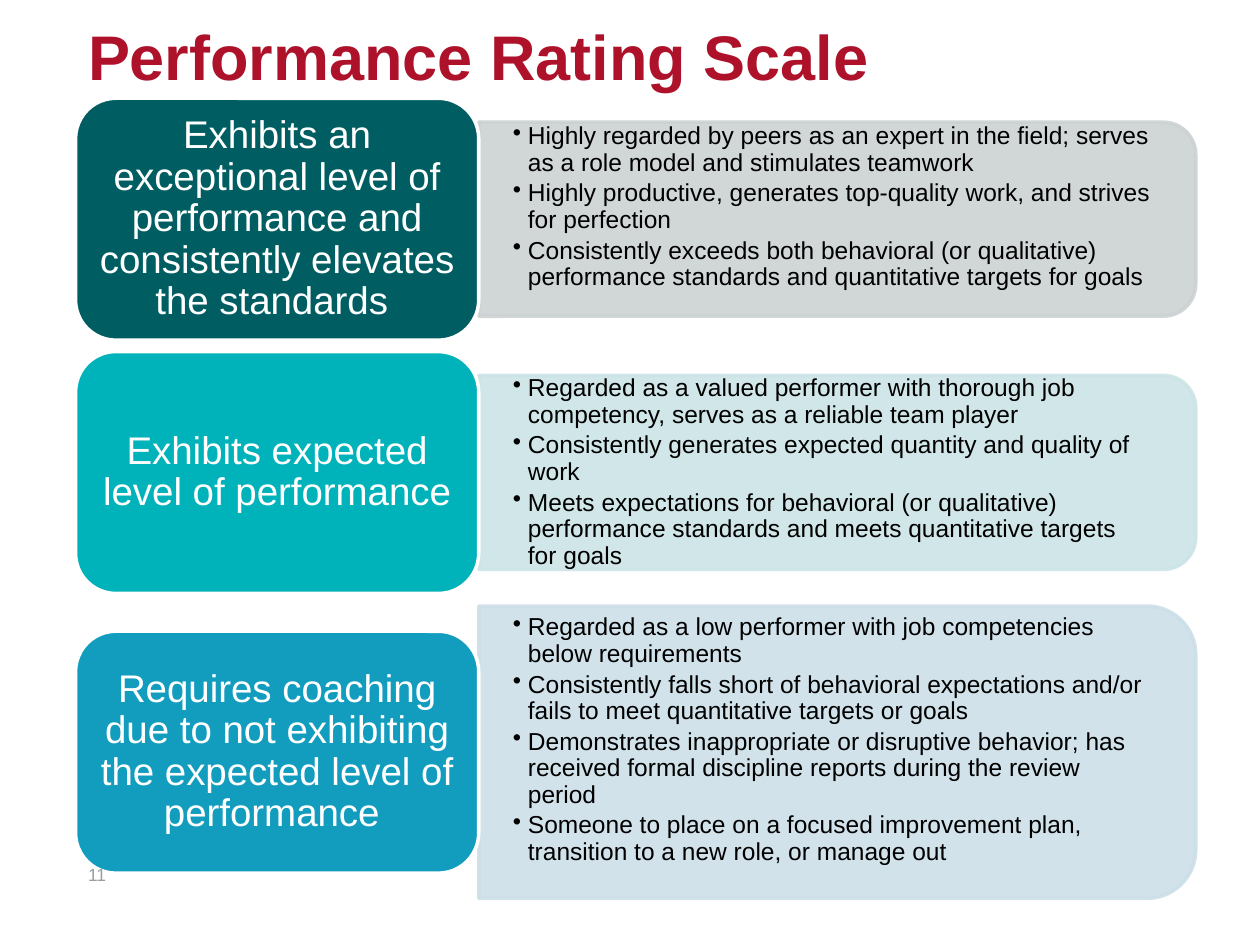
from pptx import Presentation
from pptx.util import Inches, Pt
from pptx.dml.color import RGBColor
from pptx.enum.shapes import MSO_SHAPE as Shape
from pptx.enum.text import MSO_ANCHOR as Anchor, PP_ALIGN as Align
from lxml.etree import SubElement
from pptx.oxml.ns import qn

THEME = {
    "font": "Arial",
    "title": {"size": 36, "color": "AD122A", "bold": True},
    "label": {"size": 22, "color": "FFFFFF", "bold": False},
    "bullet": {"size": 14, "color": "000000", "bold": False},
    "number": {"size": 10, "color": "989EA3", "bold": False},
    "outline": "FFFFFF",
    "opacity": "90000",
}

RATINGS = [
    {
        "label": "Exhibits an exceptional level of performance and consistently elevates the standards ",
        "fill": "005E63", "tint": "CCD2D3", "center": 1.74, "height": 1.54, "lift": 0.19,
        "bullets": [
            "Highly regarded by peers as an expert in the field; serves as a role model and stimulates teamwork",
            "Highly productive, generates top-quality work, and strives for perfection",
            "Consistently exceeds both behavioral (or qualitative) performance standards and quantitative targets for goals",
        ],
    },
    {
        "label": "Exhibits expected level of performance",
        "fill": "00B2B9", "tint": "CCE4E6", "center": 3.75, "height": 1.54, "lift": 0,
        "bullets": [
            "Regarded as a valued performer with thorough job competency, serves as a reliable team player",
            "Consistently generates expected quantity and quality of work",
            "Meets expectations for behavioral (or qualitative) performance standards and meets quantitative targets for goals",
        ],
    },
    {
        "label": "Requires coaching due to not exhibiting the expected level of performance ",
        "fill": "129DBF", "tint": "CCDFE8", "center": 5.97, "height": 2.32, "lift": 0.19,
        "bullets": [
            "Regarded as a low performer with job competencies below requirements",
            "Consistently falls short of behavioral expectations and/or fails to meet quantitative targets or goals",
            "Demonstrates inappropriate or disruptive behavior; has received formal discipline reports during the review period",
            "Someone to place on a focused improvement plan, transition to a new role, or manage out",
        ],
    },
]

LEFT, LABEL_WIDTH, LABEL_HEIGHT, PANEL_WIDTH = 0.6, 3.2, 1.92, 5.69
PANEL_LEFT = LEFT + LABEL_WIDTH


def write(box, lines, style, margins, anchor=Anchor.MIDDLE, align=Align.LEFT, spacing=0.9, after=0, bullet=False):
    frame = box.text_frame
    sides = ("margin_left", "margin_top", "margin_right", "margin_bottom")
    layout = dict(zip(sides, map(Inches, margins)), word_wrap=True, vertical_anchor=anchor)
    for name, value in layout.items():
        setattr(frame, name, value)
    for index, line in enumerate(lines):
        para = frame.add_paragraph() if index else frame.paragraphs[0]
        if bullet:
            props = para._p.get_or_add_pPr()
            props.set("marL", str(Inches(0.12)))
            props.set("indent", str(Inches(-0.12)))
            SubElement(props, qn("a:buChar")).set("char", "•")
        for name, value in {"alignment": align, "line_spacing": spacing, "space_after": Pt(after)}.items():
            setattr(para, name, value)
        span = para.add_run()
        span.text = line
        for name, value in {"name": THEME["font"], "size": Pt(style["size"]), "bold": style["bold"]}.items():
            setattr(span.font, name, value)
        span.font.color.rgb = RGBColor.from_string(style["color"])


def add_card(kind, left, top, width, height, fill, outline):
    card = page.shapes.add_shape(kind, Inches(left), Inches(top), Inches(width), Inches(height))
    card.shadow.inherit = False
    card.fill.solid()
    card.fill.fore_color.rgb = RGBColor.from_string(fill)
    card.line.color.rgb = RGBColor.from_string(outline)
    card.line.width = Pt(2)
    return card


deck = Presentation()
deck.slide_width, deck.slide_height = Inches(10), Inches(7.5)
page = deck.slides.add_slide(deck.slide_layouts[6])

title = page.shapes.add_textbox(Inches(LEFT), Inches(0.18), Inches(8.89), Inches(0.6))
write(title, ["Performance Rating Scale"], THEME["title"], (0.1, 0, 0.1, 0))

for rating in RATINGS:
    center, height, tint = rating["center"], rating["height"], rating["tint"]

    panel = add_card(Shape.ROUND_2_SAME_RECTANGLE, PANEL_LEFT + (PANEL_WIDTH - height) / 2,
                     center - PANEL_WIDTH / 2, height, PANEL_WIDTH, tint, tint)
    panel.rotation = 90
    for color in panel._element.spPr.iter(qn("a:srgbClr")):
        SubElement(color, qn("a:alpha")).set("val", THEME["opacity"])

    details = page.shapes.add_textbox(Inches(PANEL_LEFT), Inches(center - height * 0.45),
                                      Inches(PANEL_WIDTH - height * 0.05), Inches(height * 0.9))
    write(details, rating["bullets"], THEME["bullet"], (0.27, 0.14, 0.27, 0.14 + rating["lift"]),
          after=2.4, bullet=True)

    label = add_card(Shape.ROUNDED_RECTANGLE, LEFT, center - LABEL_HEIGHT / 2,
                     LABEL_WIDTH, LABEL_HEIGHT, rating["fill"], THEME["outline"])
    write(label, [rating["label"]], THEME["label"], (0.09, 0.05, 0.09, 0.05), align=Align.CENTER)

number = page.shapes.add_textbox(Inches(LEFT), Inches(6.81), Inches(0.55), Inches(0.32))
write(number, ["11"], THEME["number"], (0.1, 0.05, 0.1, 0.05), anchor=Anchor.TOP, spacing=1.0)

deck.save("out.pptx")
